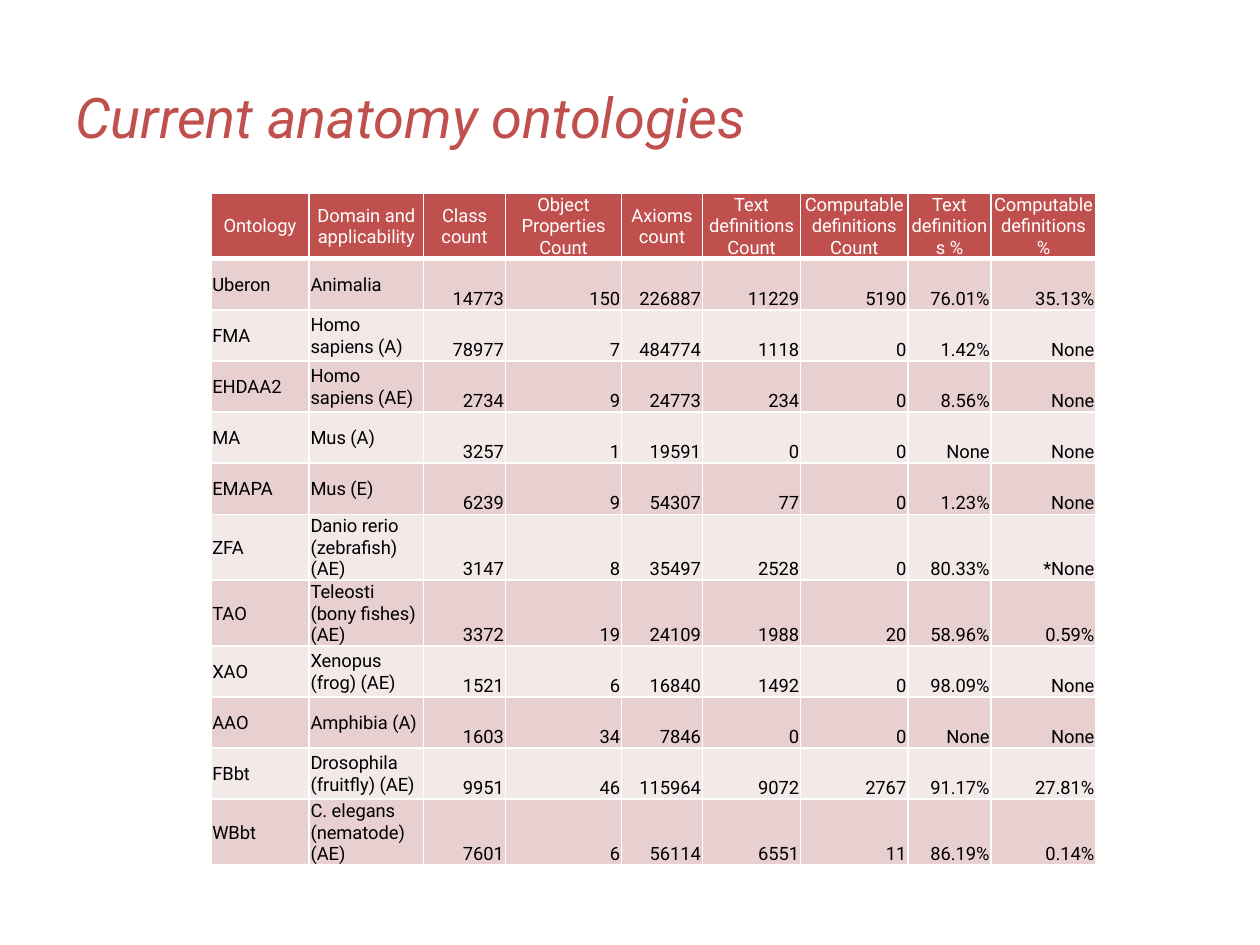
from lxml.etree import SubElement
from pptx import Presentation
from pptx.dml.color import RGBColor
from pptx.enum.text import MSO_ANCHOR as Anchor, PP_ALIGN as Align
from pptx.oxml.ns import qn
from pptx.util import Cm, Pt

COLORS = {
    "accent": "C0504D",
    "white": "FFFFFF",
    "black": "000000",
    "odd": "E8D0D0",
    "even": "F4E9E9",
}
HEADINGS = (
    "Ontology", "Domain and applicability", "Class count",
    "Object\nProperties Count", "Axioms count", "Text definitions Count",
    "Computable definitions Count", "Text definitions %",
    "Computable definitions %",
)
ONTOLOGIES = (
    ("Uberon", "Animalia", "14773", "150", "226887", "11229", "5190", "76.01%", "35.13%"),
    ("FMA", "Homo sapiens (A)", "78977", "7", "484774", "1118", "0", "1.42%", "None"),
    ("EHDAA2", "Homo sapiens (AE)", "2734", "9", "24773", "234", "0", "8.56%", "None"),
    ("MA", "Mus (A)", "3257", "1", "19591", "0", "0", "None", "None"),
    ("EMAPA", "Mus (E)", "6239", "9", "54307", "77", "0", "1.23%", "None"),
    ("ZFA", "Danio rerio (zebrafish) (AE)", "3147", "8", "35497", "2528", "0", "80.33%", "*None"),
    ("TAO", "Teleosti (bony fishes) (AE)", "3372", "19", "24109", "1988", "20", "58.96%", "0.59%"),
    ("XAO", "Xenopus (frog) (AE)", "1521", "6", "16840", "1492", "0", "98.09%", "None"),
    ("AAO", "Amphibia (A)", "1603", "34", "7846", "0", "0", "None", "None"),
    ("FBbt", "Drosophila (fruitfly) (AE)", "9951", "46", "115964", "9072", "2767", "91.17%", "27.81%"),
    ("WBbt", "C. elegans (nematode) (AE)", "7601", "6", "56114", "6551", "11", "86.19%", "0.14%"),
)
COLUMN_WIDTHS = (1.98, 2.31, 1.65, 2.34, 1.63, 1.98, 2.16, 1.68, 2.11)
ROW_HEIGHT = 1.03
LABEL_COLUMNS = 2


class SlideBuilder:
    def __init__(self, slide, font="Roboto"):
        self.slide = slide
        self.font = font

    def style(self, paragraph, size, color, align, italic=False):
        paragraph.alignment = align
        font = paragraph.font
        font.name, font.size = self.font, Pt(size)
        font.bold, font.italic = False, italic
        font.color.rgb = RGBColor.from_string(COLORS[color])

    def title(self, text, left, top, width, height):
        title = self.slide.shapes.title
        title.left, title.top = Cm(left), Cm(top)
        title.width, title.height = Cm(width), Cm(height)
        frame = title.text_frame
        frame.text = text
        frame.vertical_anchor = Anchor.MIDDLE
        self.style(frame.paragraphs[0], 32, "accent", Align.LEFT, italic=True)

    def table(self, rows, left, top, widths, row_height):
        table = self.slide.shapes.add_table(
            len(rows), len(widths), Cm(left), Cm(top),
            Cm(sum(widths)), Cm(row_height * len(rows)),
        ).table
        for column, width in zip(table.columns, widths):
            column.width = Cm(width)
        for r, values in enumerate(rows):
            table.rows[r].height = Cm(row_height)
            for c, text in enumerate(values):
                self.cell(table.cell(r, c), text, r, c)

    def cell(self, cell, text, row, column):
        header, label = row == 0, column < LABEL_COLUMNS
        if header:
            fill, color, align = "accent", "white", Align.CENTER
        else:
            fill, color = "odd" if row % 2 else "even", "black"
            align = Align.LEFT if label else Align.RIGHT
        cell.text = text
        cell.vertical_anchor = Anchor.MIDDLE if header or label else Anchor.BOTTOM
        cell.margin_left = cell.margin_right = cell.margin_top = Cm(0.03)
        cell.margin_bottom = 0
        for paragraph in cell.text_frame.paragraphs:
            self.style(paragraph, 10.5, color, align)
        self.borders(cell, top=3 if row == 1 else 1, bottom=3 if header else 1)
        cell.fill.solid()
        cell.fill.fore_color.rgb = RGBColor.from_string(COLORS[fill])

    def borders(self, cell, top, bottom):
        """Draw white cell edges; must run before the fill is set."""
        properties = cell._tc.get_or_add_tcPr()
        for side, width in (("L", 1), ("R", 1), ("T", top), ("B", bottom)):
            edge = SubElement(properties, qn(f"a:ln{side}"), w=str(Pt(width)))
            paint = SubElement(edge, qn("a:solidFill"))
            SubElement(paint, qn("a:srgbClr"), val=COLORS["white"])


def main():
    deck = Presentation()
    deck.slide_width, deck.slide_height = Cm(25.4), Cm(19.05)
    builder = SlideBuilder(deck.slides.add_slide(deck.slide_layouts[5]))
    builder.title("Current anatomy ontologies", 1.27, 0.76, 22.86, 3.18)
    builder.table((HEADINGS, *ONTOLOGIES), 4.25, 3.89, COLUMN_WIDTHS, ROW_HEIGHT)
    deck.save("out.pptx")


if __name__ == "__main__":
    main()
